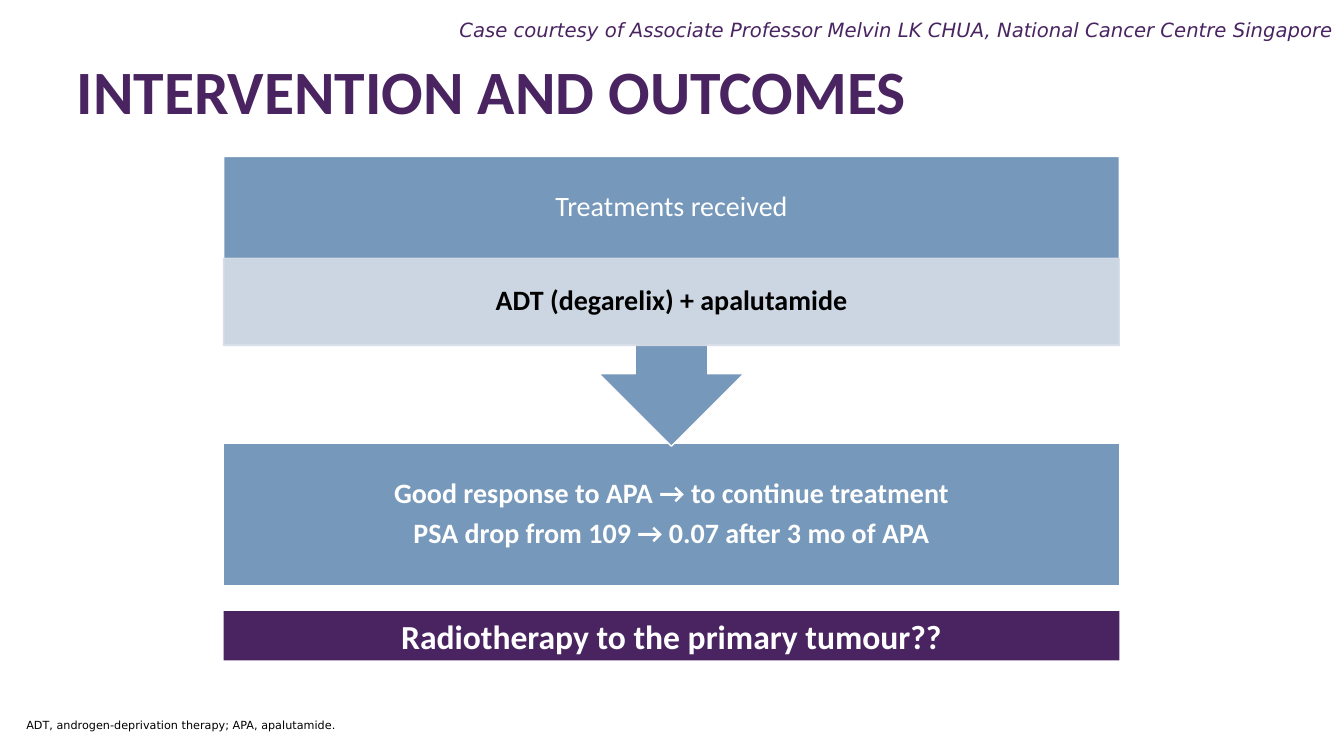
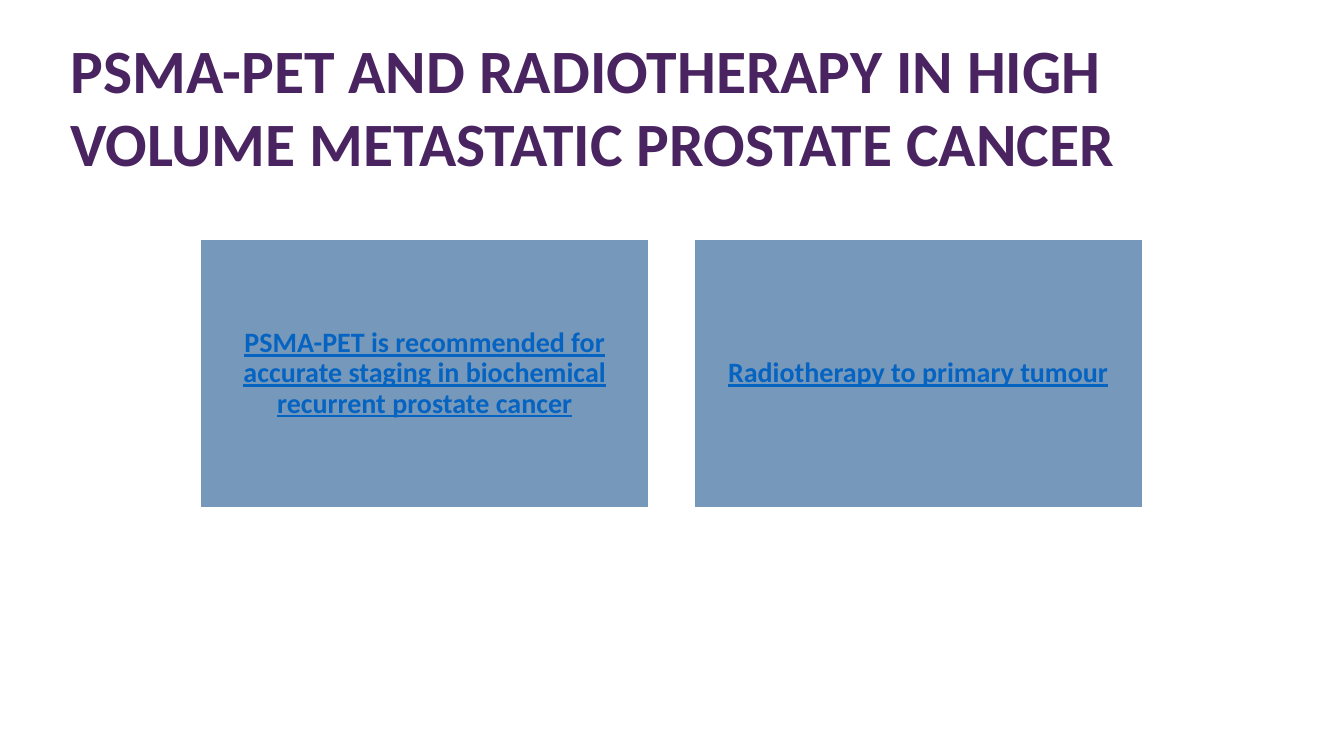
from lxml import etree
from pptx import Presentation
from pptx import util as u
from pptx.dml.color import RGBColor
from pptx.enum import shapes, text
from pptx.oxml.ns import qn

# Shared style
PX = 9525
PURPLE = RGBColor(0x49, 0x24, 0x61)
BLUE = RGBColor(0x76, 0x98, 0xBA)
PALE = RGBColor(0xD6, 0xDD, 0xE7)
LINK = RGBColor(0x05, 0x63, 0xC1)
WHITE = RGBColor(0xFF, 0xFF, 0xFF)
BLACK = RGBColor(0x00, 0x00, 0x00)
HEADING, NOTE = "Calibri", "DejaVu Sans"
LEFT, CENTRE, RIGHT = text.PP_ALIGN.LEFT, text.PP_ALIGN.CENTER, text.PP_ALIGN.RIGHT
TOP, MIDDLE = text.MSO_ANCHOR.TOP, text.MSO_ANCHOR.MIDDLE
RECT = shapes.MSO_SHAPE.RECTANGLE
CALLOUT = shapes.MSO_SHAPE.DOWN_ARROW_CALLOUT

# Content
OUTCOMES_TITLE = "INTERVENTION AND OUTCOMES"
CREDIT = ("Case courtesy of Associate Professor Melvin LK CHUA, "
          "National Cancer Centre Singapore")
ABBREVIATIONS = "ADT, androgen-deprivation therapy; APA, apalutamide."
TREATMENT_HEADING = "Treatments received"
TREATMENT = "ADT (degarelix) + apalutamide"
RESPONSE = ["Good response to APA → to continue treatment",
            "PSA drop from 109 → 0.07 after 3 mo of APA"]
QUESTION = "Radiotherapy to the primary tumour??"
TOPICS_TITLE = "PSMA-PET AND RADIOTHERAPY IN HIGH VOLUME METASTATIC PROSTATE CANCER"
TOPICS = ["PSMA-PET is recommended for accurate staging in biochemical "
          "recurrent prostate cancer",
          "Radiotherapy to primary tumour"]

# Layout in px
FLOW_LEFT, FLOW_WIDTH = 213, 853
CALLOUT_TOP, STRIP_TOP, STRIP_HEIGHT = 149, 246, 83
CARD_LEFT, CARD_TOP, CARD_WIDTH, CARD_HEIGHT, CARD_GAP = 191, 228, 427, 256, 43


def write(box, lines, size, color, font=HEADING, bold=False, italic=False,
          underline=False, align=CENTRE, anchor=MIDDLE, spacing=0.9,
          insets=(10, 5, 10, 5)):
    frame = box.text_frame
    frame.word_wrap = True
    frame.vertical_anchor = anchor
    (frame.margin_left, frame.margin_top,
     frame.margin_right, frame.margin_bottom) = [side * PX for side in insets]
    for index, line in enumerate(lines):
        para = frame.add_paragraph() if index else frame.paragraphs[0]
        para.alignment = align
        para.line_spacing = spacing
        if index:
            para.space_before = u.Pt(size * 0.35)
        span = para.add_run()
        span.text = line
        span.font.name, span.font.size = font, u.Pt(size)
        span.font.bold, span.font.italic = bold, italic
        span.font.underline = underline
        span.font.color.rgb = color


def add_text(page, area, line, size, color, **style):
    box = page.shapes.add_textbox(*[value * PX for value in area])
    write(box, [line], size, color, **style)


def add_title(page, area, line, **style):
    add_text(page, area, line, 44, PURPLE, bold=True, align=LEFT, **style)


def add_block(page, area, lines, fill=BLUE, outline=WHITE, kind=RECT,
              opacity=100, size=20, color=WHITE, **style):
    block = page.shapes.add_shape(kind, *[value * PX for value in area])
    block.shadow.inherit = False
    block.fill.solid()
    block.fill.fore_color.rgb = fill
    if outline is None:
        block.line.fill.background()
    else:
        block.line.color.rgb = outline
        block.line.width = u.Pt(1)
    if opacity < 100:
        for tint in block._element.spPr.iter(qn("a:srgbClr")):
            etree.SubElement(tint, qn("a:alpha"), val=str(opacity * 1000))
    write(block, lines, size, color, **style)


def build_outcomes(page):
    add_title(page, (63, 40, 1154, 101), OUTCOMES_TITLE)
    add_text(page, (340, 18, 940, 18), CREDIT, 14, PURPLE, font=NOTE,
             italic=True, align=RIGHT, spacing=1.1)
    add_text(page, (15, 660, 660, 60), ABBREVIATIONS, 8, BLACK, font=NOTE,
             align=LEFT, spacing=1.1)
    # Treatment flow
    add_block(page, (FLOW_LEFT, 422, FLOW_WIDTH, 136), RESPONSE, bold=True,
              insets=(15, 15, 15, 15))
    add_block(page, (FLOW_LEFT, CALLOUT_TOP, FLOW_WIDTH, 276),
              [TREATMENT_HEADING], kind=CALLOUT,
              insets=(15, 15, 15, 15 + STRIP_HEIGHT))
    add_block(page, (FLOW_LEFT, STRIP_TOP, FLOW_WIDTH, STRIP_HEIGHT),
              [TREATMENT], fill=PALE, outline=PALE, opacity=90, color=BLACK,
              bold=True, insets=(15, 3, 15, 3))
    # Closing question
    add_block(page, (FLOW_LEFT, 582, FLOW_WIDTH, 47), [QUESTION], fill=PURPLE,
              outline=None, size=24, bold=True, spacing=1.0)


def build_topics(page):
    for index, topic in enumerate(TOPICS):
        left = CARD_LEFT + index * (CARD_WIDTH + CARD_GAP)
        add_block(page, (left, CARD_TOP, CARD_WIDTH, CARD_HEIGHT), [topic],
                  color=LINK, bold=True, underline=True, insets=(8, 8, 8, 8))
    add_title(page, (57, 25, 1167, 152), TOPICS_TITLE, anchor=TOP, spacing=1.0)


def main():
    deck = Presentation()
    deck.slide_width, deck.slide_height = 1280 * PX, 720 * PX
    for build in (build_outcomes, build_topics):
        build(deck.slides.add_slide(deck.slide_layouts[6]))
    deck.save("out.pptx")


if __name__ == "__main__":
    main()
